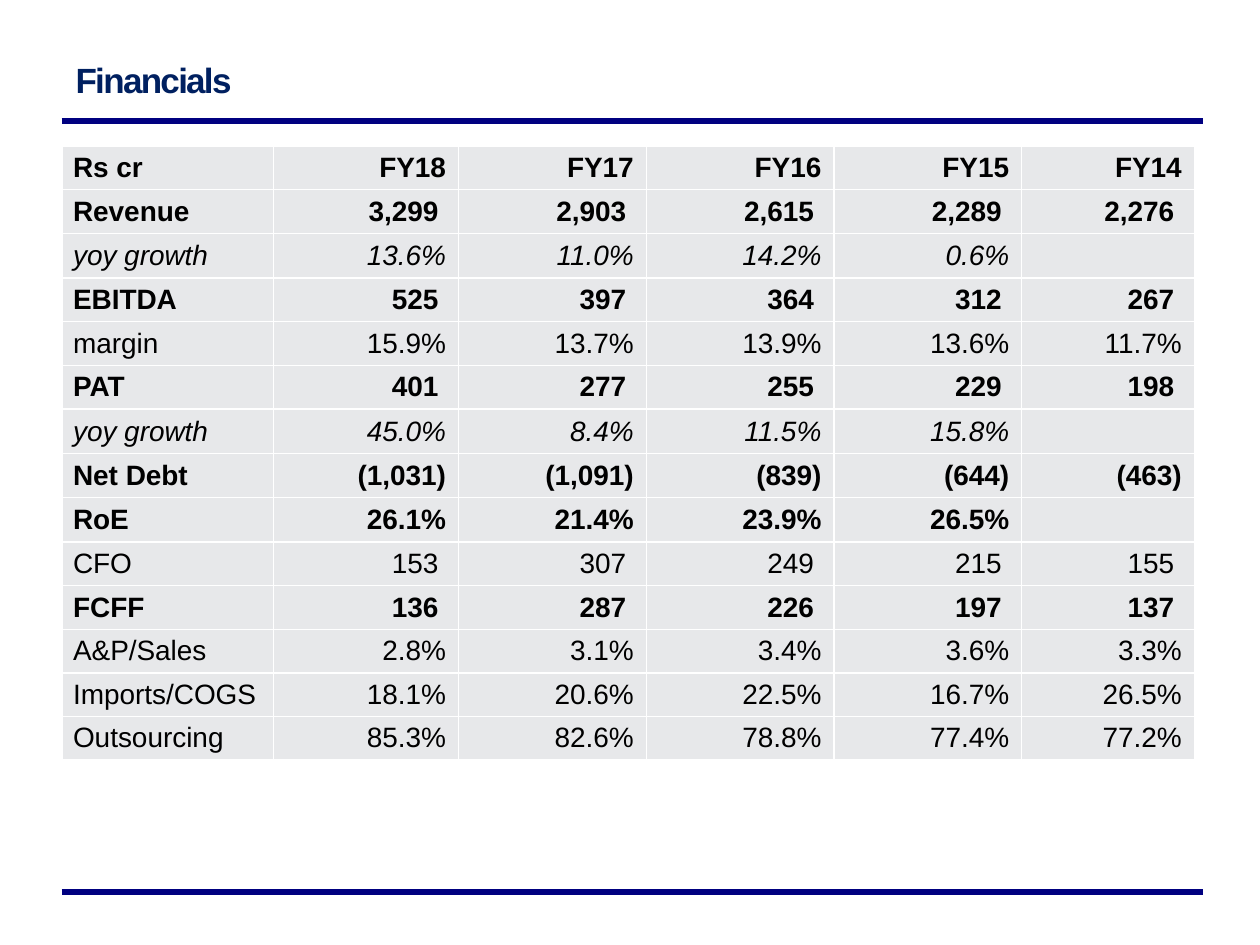
from lxml.etree import SubElement
from pptx import Presentation
from pptx.dml.color import RGBColor
from pptx.enum.shapes import MSO_CONNECTOR
from pptx.enum.text import MSO_ANCHOR, PP_ALIGN
from pptx.oxml.ns import qn
from pptx.util import Inches, Pt

FONT = "Arial"
NAVY, TITLE, BLACK, WHITE, GREY = "000080", "002060", "000000", "FFFFFF", "E7E8EA"
COLUMNS = [1.68, 1.47, 1.49, 1.49, 1.49, 1.37]
ROW_HEIGHT = 4.85 / 14
RULES_Y = [0.96, 7.08]

# (style, cells): "b" bold, "i" italic, "" plain
ROWS = [
    ("b", ["Rs cr", "FY18", "FY17", "FY16", "FY15", "FY14"]),
    ("b", ["Revenue", "3,299", "2,903", "2,615", "2,289", "2,276"]),
    ("i", ["yoy growth", "13.6%", "11.0%", "14.2%", "0.6%", ""]),
    ("b", ["EBITDA", "525", "397", "364", "312", "267"]),
    ("", ["margin", "15.9%", "13.7%", "13.9%", "13.6%", "11.7%"]),
    ("b", ["PAT", "401", "277", "255", "229", "198"]),
    ("i", ["yoy growth", "45.0%", "8.4%", "11.5%", "15.8%", ""]),
    ("b", ["Net Debt", "(1,031)", "(1,091)", "(839)", "(644)", "(463)"]),
    ("b", ["RoE", "26.1%", "21.4%", "23.9%", "26.5%", ""]),
    ("", ["CFO", "153", "307", "249", "215", "155"]),
    ("b", ["FCFF", "136", "287", "226", "197", "137"]),
    ("", ["A&P/Sales", "2.8%", "3.1%", "3.4%", "3.6%", "3.3%"]),
    ("", ["Imports/COGS", "18.1%", "20.6%", "22.5%", "16.7%", "26.5%"]),
    ("", ["Outsourcing", "85.3%", "82.6%", "78.8%", "77.4%", "77.2%"]),
]


def rgb(color):
    return RGBColor.from_string(color)


def format_runs(p, size, color, bold=False, italic=False):
    for r in p.runs:
        r.font.name, r.font.size = FONT, Pt(size)
        r.font.bold, r.font.italic = bold, italic
        r.font.color.rgb = rgb(color)


def add_title(s, text):
    title = s.shapes.title
    title.left, title.top = Inches(0.5), Inches(0.13)
    title.width, title.height = Inches(9), Inches(0.83)
    tf = title.text_frame
    tf.text = text
    tf.vertical_anchor = MSO_ANCHOR.MIDDLE
    p = tf.paragraphs[0]
    p.alignment = PP_ALIGN.LEFT
    p.line_spacing = 1.5
    p.space_before = p.space_after = Pt(10)
    format_runs(p, 20, TITLE, bold=True)
    p.runs[0].font._element.set("spc", "-100")


def add_rule(s, y):
    line = s.shapes.add_connector(
        MSO_CONNECTOR.STRAIGHT, Inches(0.49), Inches(y), Inches(9.55), Inches(y))
    line.line.color.rgb = rgb(NAVY)
    line.line.width = Pt(3)
    SubElement(line._element.spPr, qn("a:effectLst"))


def add_borders(cell):
    tc_pr = cell._tc.get_or_add_tcPr()
    for side in ("lnL", "lnR", "lnT", "lnB"):
        ln = SubElement(tc_pr, qn(f"a:{side}"), w=str(Pt(1)))
        fill = SubElement(ln, qn("a:solidFill"))
        SubElement(fill, qn("a:srgbClr"), val=WHITE)


def fill_cell(cell, text, style, is_label):
    add_borders(cell)
    cell.fill.solid()
    cell.fill.fore_color.rgb = rgb(GREY)
    cell.vertical_anchor = MSO_ANCHOR.BOTTOM
    cell.margin_top, cell.margin_bottom = 0, Inches(0.05)
    cell.margin_left = Inches(0.09)
    # Positive amounts leave room for a closing bracket
    is_amount = text.replace(",", "").isdigit()
    cell.margin_right = Inches(0.16 if is_amount else 0.1)
    cell.text_frame.text = text
    p = cell.text_frame.paragraphs[0]
    p.alignment = PP_ALIGN.LEFT if is_label else PP_ALIGN.RIGHT
    format_runs(p, 16, BLACK, bold=style == "b", italic=style == "i")


def add_financials(s):
    table = s.shapes.add_table(
        len(ROWS), len(COLUMNS), Inches(0.49), Inches(1.16),
        Inches(sum(COLUMNS)), Inches(ROW_HEIGHT * len(ROWS))).table
    table.first_row = table.horz_banding = False
    for column, width in zip(table.columns, COLUMNS):
        column.width = Inches(width)
    for i, (style, values) in enumerate(ROWS):
        table.rows[i].height = Inches(ROW_HEIGHT)
        for j, text in enumerate(values):
            fill_cell(table.cell(i, j), text, style, is_label=j == 0)


def main():
    prs = Presentation()
    prs.slide_width, prs.slide_height = Inches(10), Inches(7.5)
    s = prs.slides.add_slide(prs.slide_layouts[5])
    for y in RULES_Y:
        add_rule(s, y)
    add_title(s, "Financials")
    add_financials(s)
    prs.save("out.pptx")


if __name__ == "__main__":
    main()
